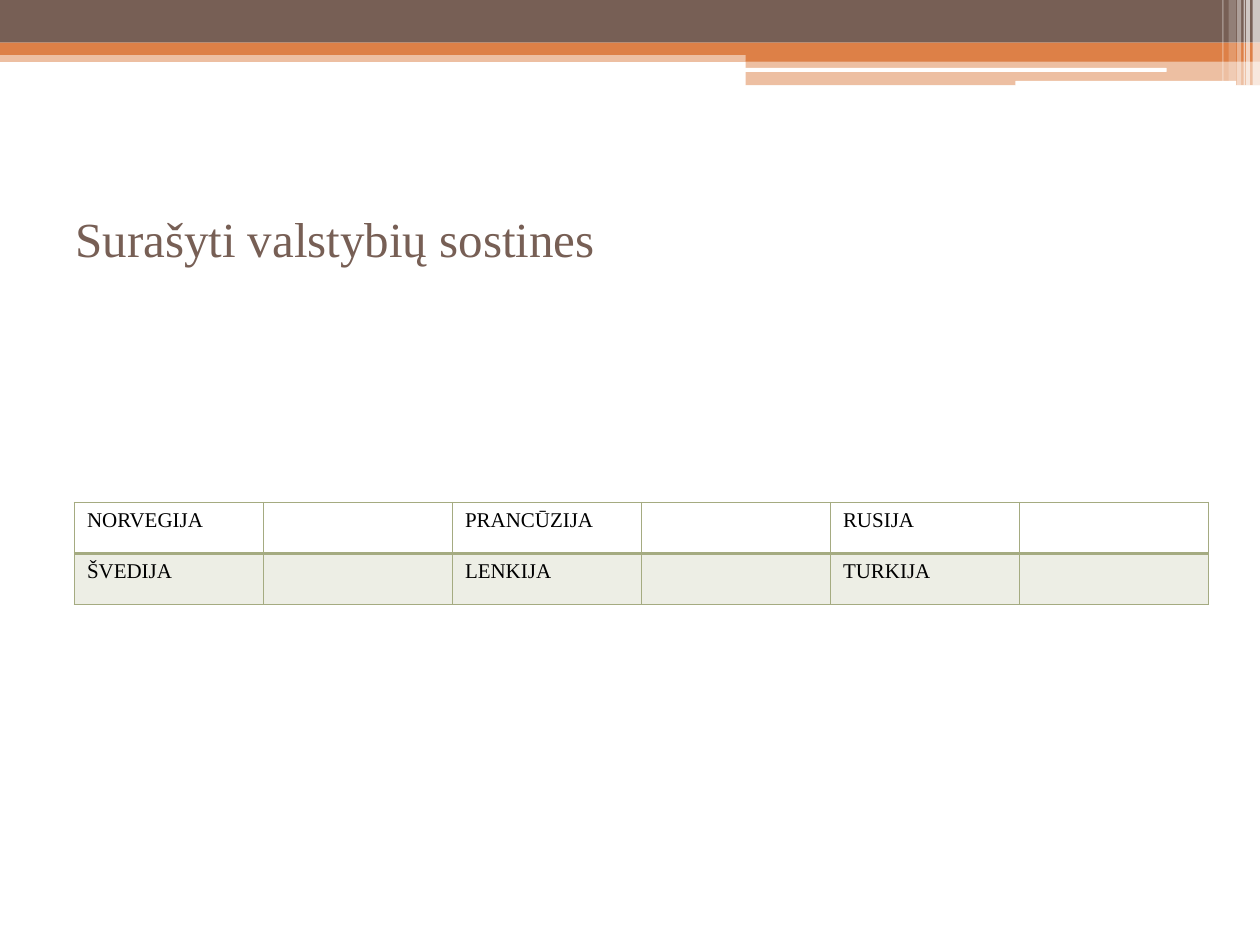
from lxml import etree
from pptx import Presentation
from pptx.dml.color import RGBColor
from pptx.enum.shapes import MSO_SHAPE
from pptx.enum.text import MSO_ANCHOR
from pptx.oxml.ns import qn
from pptx.util import Cm, Pt

RECT = MSO_SHAPE.RECTANGLE
ROUNDED = MSO_SHAPE.ROUNDED_RECTANGLE
MIDDLE = MSO_ANCHOR.MIDDLE

BROWN = RGBColor(0x77, 0x5F, 0x55)
ORANGE = RGBColor(0xDD, 0x80, 0x47)
GREEN = RGBColor(0xA5, 0xAB, 0x81)
WHITE = RGBColor(0xFF, 0xFF, 0xFF)
BLACK = RGBColor(0, 0, 0)
FONT = "Times New Roman"

BANDS = [
    (RECT, 0, 1.02, 25.4, 0.23, ORANGE, 50),
    (RECT, 0, 0, 25.4, 0.86, BROWN, 100),
    (RECT, 0, 0.86, 25.4, 0.25, ORANGE, 100),
    (RECT, 15.03, 0.99, 10.37, 0.25, ORANGE, 100),
    (RECT, 15.03, 1.22, 10.37, 0.5, ORANGE, 50),
    (ROUNDED, 15.01, 1.37, 8.51, 0.08, WHITE, 100),
    (ROUNDED, 20.47, 1.63, 4.45, 0.1, WHITE, 100),
]
STRIPES = [
    (25.25, 0.15, 1.73, 65),
    (25.12, 0.08, 1.73, 65),
    (25.07, 0.03, 1.73, 60),
    (24.94, 0.08, 1.73, 40),
    (24.77, 0.15, 1.63, 20),
    (24.64, 0.03, 1.63, 30),
]
COUNTRIES = [
    ["NORVEGIJA", "PRANCŪZIJA", "RUSIJA"],
    ["ŠVEDIJA", "LENKIJA", "TURKIJA"],
]


def paint(fill, parent, color, opacity):
    fill.solid()
    fill.fore_color.rgb = color
    if opacity < 100:
        tint = parent.find(qn("a:solidFill")).find(qn("a:srgbClr"))
        etree.SubElement(tint, qn("a:alpha"), val=str(opacity * 1000))


def style_runs(paragraph, size, color):
    for run in paragraph.runs:
        run.font.name = FONT
        run.font.size = Pt(size)
        run.font.color.rgb = color


def add_band(slide, preset, left, top, width, height, color, opacity):
    band = slide.shapes.add_shape(preset, Cm(left), Cm(top), Cm(width), Cm(height))
    band.shadow.inherit = False
    band.line.fill.background()
    paint(band.fill, band._element.spPr, color, opacity)


def add_header(slide, left, top):
    for preset, x, y, width, height, color, opacity in BANDS:
        add_band(slide, preset, left + x, top + y, width, height, color, opacity)
    for x, width, height, opacity in STRIPES:
        add_band(slide, RECT, left + x, top, width, height, WHITE, opacity)


def add_title(slide, left, top, width, height):
    title = slide.shapes.add_textbox(Cm(left), Cm(top), Cm(width), Cm(height))
    frame = title.text_frame
    frame.word_wrap = True
    frame.vertical_anchor = MIDDLE
    frame.margin_bottom = Cm(1.25)
    frame.text = "Surašyti valstybių sostines"
    style_runs(frame.paragraphs[0], 28, BROWN)


def set_borders(cell, widths):
    properties = cell._tc.get_or_add_tcPr()
    for index, (side, points) in enumerate(widths.items()):
        border = etree.Element(qn(f"a:ln{side}"), w=str(Pt(points)))
        color_fill = etree.SubElement(border, qn("a:solidFill"))
        etree.SubElement(color_fill, qn("a:srgbClr"), val=str(GREEN))
        properties.insert(index, border)


def add_country_table(slide, left, top, width, height):
    row_count, column_count = len(COUNTRIES), 2 * len(COUNTRIES[0])
    table = slide.shapes.add_table(
        row_count, column_count, Cm(left), Cm(top), Cm(width), Cm(height)
    ).table
    table.first_row = False
    table.horz_banding = False
    for row, countries in enumerate(COUNTRIES):
        for column in range(column_count):
            cell = table.cell(row, column)
            if row == 0:
                cell.fill.background()
            else:
                paint(cell.fill, cell._tc.get_or_add_tcPr(), GREEN, 20)
            set_borders(cell, {"L": 1, "R": 1, "T": 1 + row, "B": 2 - row})
        for index, country in enumerate(countries):
            paragraph = table.cell(row, 2 * index).text_frame.paragraphs[0]
            paragraph.text = country
            style_runs(paragraph, 12, BLACK)


def main():
    presentation = Presentation()
    presentation.slide_width = Cm(25.4)
    presentation.slide_height = Cm(19.05)
    slide = presentation.slides.add_slide(presentation.slide_layouts[6])
    add_header(slide, 0, 0)
    add_title(slide, 1.27, 3.18, 22.86, 4.34)
    add_country_table(slide, 1.5, 10.13, 22.86, 2.06)
    presentation.save("out.pptx")


if __name__ == "__main__":
    main()
